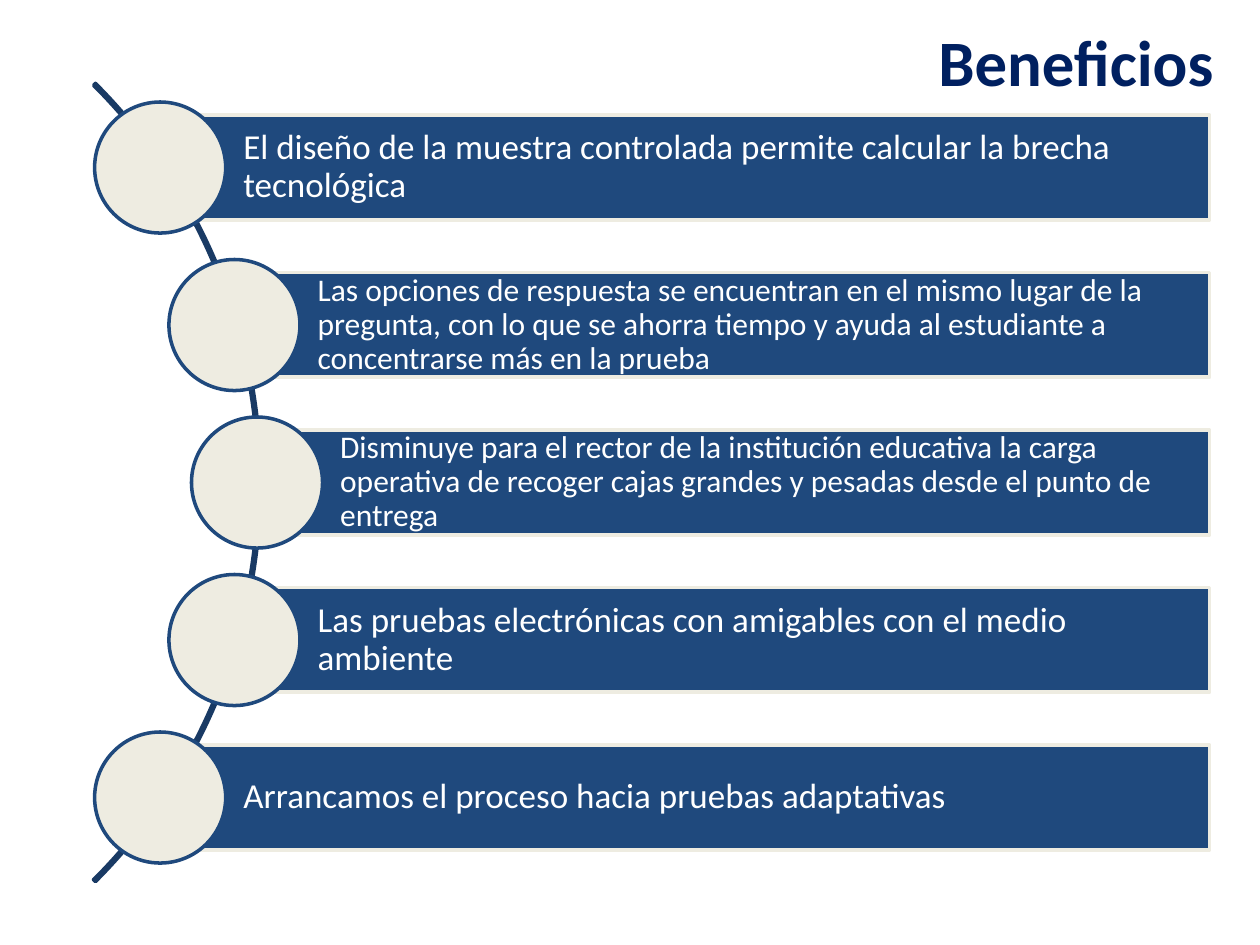
from math import sqrt

from pptx import Presentation
from pptx.dml.color import RGBColor
from pptx.enum.shapes import MSO_SHAPE
from pptx.enum.text import MSO_ANCHOR, PP_ALIGN
from pptx.util import Inches, Pt

ARC, RECT, OVAL = MSO_SHAPE.BLOCK_ARC, MSO_SHAPE.RECTANGLE, MSO_SHAPE.OVAL
TOP, MIDDLE = MSO_ANCHOR.TOP, MSO_ANCHOR.MIDDLE
LEFT, RIGHT = PP_ALIGN.LEFT, PP_ALIGN.RIGHT

TITLE = "Beneficios"
BENEFITS = [  # text, size, margin
    ("El diseño de la muestra controlada permite calcular la brecha tecnológica", 20, 0.06),
    ("Las opciones de respuesta se encuentran en el mismo lugar de la pregunta, "
     "con lo que se ahorra tiempo y ayuda al estudiante a concentrarse más en la prueba", 18, 0.05),
    ("Disminuye para el rector de la institución educativa la carga operativa "
     "de recoger cajas grandes y pesadas desde el punto de entrega", 18, 0.05),
    ("Las pruebas electrónicas con amigables con el medio ambiente", 20, 0.06),
    ("Arrancamos el proceso hacia pruebas adaptativas", 20, 0.06),
]
BLUE, CREAM, NAVY, DARK, WHITE = "1F497D", "EEECE1", "002060", "193A64", "FFFFFF"

ARC_X, ARC_Y, ARC_SIZE = -2.41, 3.83, 8.96
RADIUS = 4.45  # the circles sit on this radius
STEP, BAR_H, DISC, BAR_END = 1.25, 0.83, 1.04, 9.6


def color(code):
    return RGBColor.from_string(code)


def add_shape(slide, kind, left, top, width, height, line, fill=None):
    shape = slide.shapes.add_shape(
        kind, Inches(left), Inches(top), Inches(width), Inches(height))
    shape.shadow.inherit = False
    if fill:
        shape.fill.solid()
        shape.fill.fore_color.rgb = color(fill)
    else:
        shape.fill.background()
    shape.line.color.rgb = color(line)
    shape.line.width = Pt(2)
    return shape


def write(shape, text, size, ink, insets, bold=False, align=LEFT, anchor=MIDDLE, spacing=1.0):
    frame = shape.text_frame
    frame.word_wrap = True
    frame.vertical_anchor = anchor
    (frame.margin_left, frame.margin_top,
     frame.margin_right, frame.margin_bottom) = [Inches(n) for n in insets]
    para = frame.paragraphs[0]
    para.alignment = align
    para.line_spacing = spacing
    run = para.add_run()
    run.text = text
    run.font.name = "Calibri"
    run.font.size = Pt(size)
    run.font.bold = bold
    run.font.color.rgb = color(ink)


def main():
    deck = Presentation()
    deck.slide_width, deck.slide_height = Inches(10), Inches(7.5)
    slide = deck.slides.add_slide(deck.slide_layouts[6])

    arc = add_shape(slide, ARC, ARC_X - ARC_SIZE / 2, ARC_Y - ARC_SIZE / 2,
                    ARC_SIZE, ARC_SIZE, DARK)
    for i, value in enumerate((189, 27, 0.0024)):
        arc.adjustments[i] = value

    for i, (text, size, pad) in enumerate(BENEFITS):
        rise = (i - (len(BENEFITS) - 1) / 2) * STEP
        x, y = ARC_X + sqrt(RADIUS ** 2 - rise ** 2), ARC_Y + rise
        bar = add_shape(slide, RECT, x, y - BAR_H / 2, BAR_END - x, BAR_H, CREAM, BLUE)
        write(bar, text, size, WHITE, (0.66, pad, pad, pad), spacing=0.9)
        add_shape(slide, OVAL, x - DISC / 2, y - DISC / 2, DISC, DISC, BLUE, CREAM)

    title = slide.shapes.add_textbox(Inches(1.2), Inches(0.13), Inches(8.5), Inches(0.63))
    write(title, TITLE, 37, NAVY, (0.07, 0.04, 0.07, 0.04),
          bold=True, align=RIGHT, anchor=TOP)
    deck.save("out.pptx")


if __name__ == "__main__":
    main()
